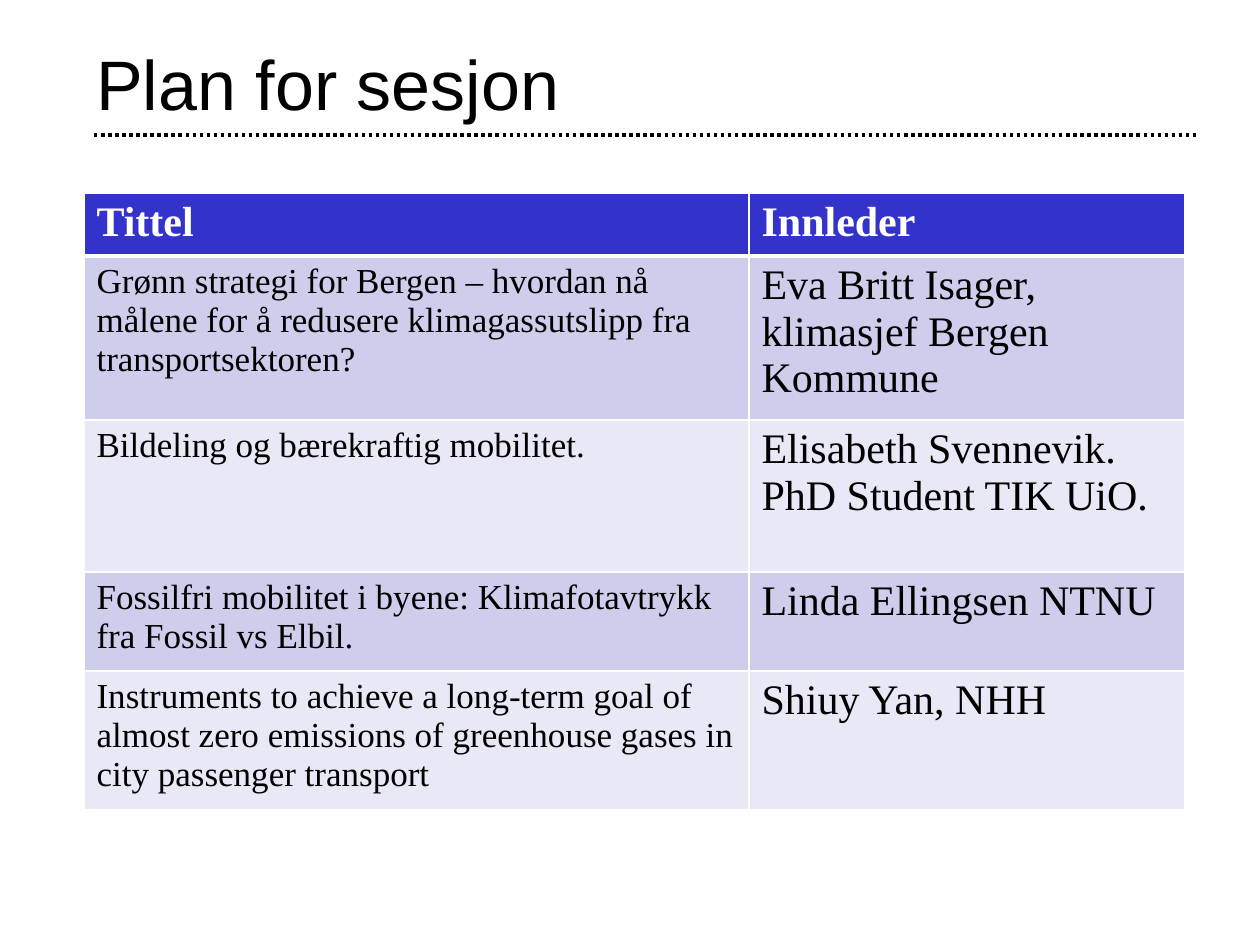
from lxml.etree import SubElement
from pptx import Presentation
from pptx.dml.color import RGBColor
from pptx.enum.dml import MSO_LINE
from pptx.enum.shapes import MSO_CONNECTOR
from pptx.enum.text import MSO_ANCHOR
from pptx.oxml.ns import qn
from pptx.util import Pt

TITLE = "Plan for sesjon"
ROWS = [
    ("Tittel", "Innleder"),
    ("Grønn strategi for Bergen – hvordan nå målene for å redusere "
     "klimagassutslipp fra transportsektoren?",
     "Eva Britt Isager, klimasjef Bergen Kommune"),
    ("Bildeling og bærekraftig mobilitet.",
     "Elisabeth Svennevik. PhD Student TIK UiO."),
    ("Fossilfri mobilitet i byene: Klimafotavtrykk fra Fossil vs Elbil.",
     "Linda Ellingsen NTNU"),
    ("Instruments to achieve a long-term goal of almost zero emissions of "
     "greenhouse gases in city passenger transport",
     "Shiuy Yan, NHH"),
]
COL_WIDTHS = [665, 436]
ROW_HEIGHTS = [58, 153, 152, 99, 139]
HEADER_FILL = "3333CC"
BAND_FILLS = ["E8E8F6", "CECEEC"]
TITLE_FONT = {"name": "Arial", "size": Pt(40)}
HEADER_FONT = {"name": "Times New Roman", "size": Pt(24), "bold": True}
BODY_FONTS = [
    {"name": "Times New Roman", "size": Pt(20), "bold": False},
    {"name": "Times New Roman", "size": Pt(24), "bold": False},
]


def px(n):
    return round(n * 914400 / 126)


def rgb(value):
    return RGBColor.from_string(value)


def write(tf, text, fmt, color):
    r = tf.paragraphs[0].add_run()
    r.text = text
    for name, value in fmt.items():
        setattr(r.font, name, value)
    r.font.color.rgb = rgb(color)


def set_borders(cell, widths, color):
    tc_pr = cell._tc.get_or_add_tcPr()
    for i, (side, width) in enumerate(widths.items()):
        ln = SubElement(tc_pr, qn(f"a:ln{side}"), w=str(Pt(width)))
        fill = SubElement(ln, qn("a:solidFill"))
        SubElement(fill, qn("a:srgbClr"), val=color)
        tc_pr.insert(i, ln)


def add_title(s):
    sp = s.shapes.add_textbox(px(84), px(21), px(1071), px(123))
    tf = sp.text_frame
    tf.word_wrap = True
    tf.vertical_anchor = MSO_ANCHOR.MIDDLE
    write(tf, TITLE, TITLE_FONT, "000000")


def add_rule(s):
    rule = s.shapes.add_connector(
        MSO_CONNECTOR.STRAIGHT, px(94), px(135), px(1196), px(135))
    rule.line.color.rgb = rgb("000000")
    rule.line.width = Pt(2)
    rule.line.dash_style = MSO_LINE.ROUND_DOT
    SubElement(rule._element.spPr, qn("a:effectLst"))


def add_plan(s):
    table = s.shapes.add_table(
        len(ROWS), len(COL_WIDTHS), px(84), px(193),
        px(sum(COL_WIDTHS)), px(sum(ROW_HEIGHTS))).table
    for col, width in zip(table.columns, COL_WIDTHS):
        col.width = px(width)
    for i, (row, height) in enumerate(zip(ROWS, ROW_HEIGHTS)):
        table.rows[i].height = px(height)
        for j, text in enumerate(row):
            cell = table.cell(i, j)
            header = i == 0
            cell.fill.solid()
            cell.fill.fore_color.rgb = rgb(HEADER_FILL if header else BAND_FILLS[i % 2])
            widths = {"L": 1, "R": 1, "T": 3 if i == 1 else 1, "B": 3 if header else 1}
            set_borders(cell, widths, "FFFFFF")
            write(cell.text_frame, text, HEADER_FONT if header else BODY_FONTS[j],
                  "FFFFFF" if header else "000000")


def main():
    prs = Presentation()
    prs.slide_width, prs.slide_height = px(1260), px(945)
    s = prs.slides.add_slide(prs.slide_layouts[6])
    add_rule(s)
    add_title(s)
    add_plan(s)
    prs.save("out.pptx")


if __name__ == "__main__":
    main()
